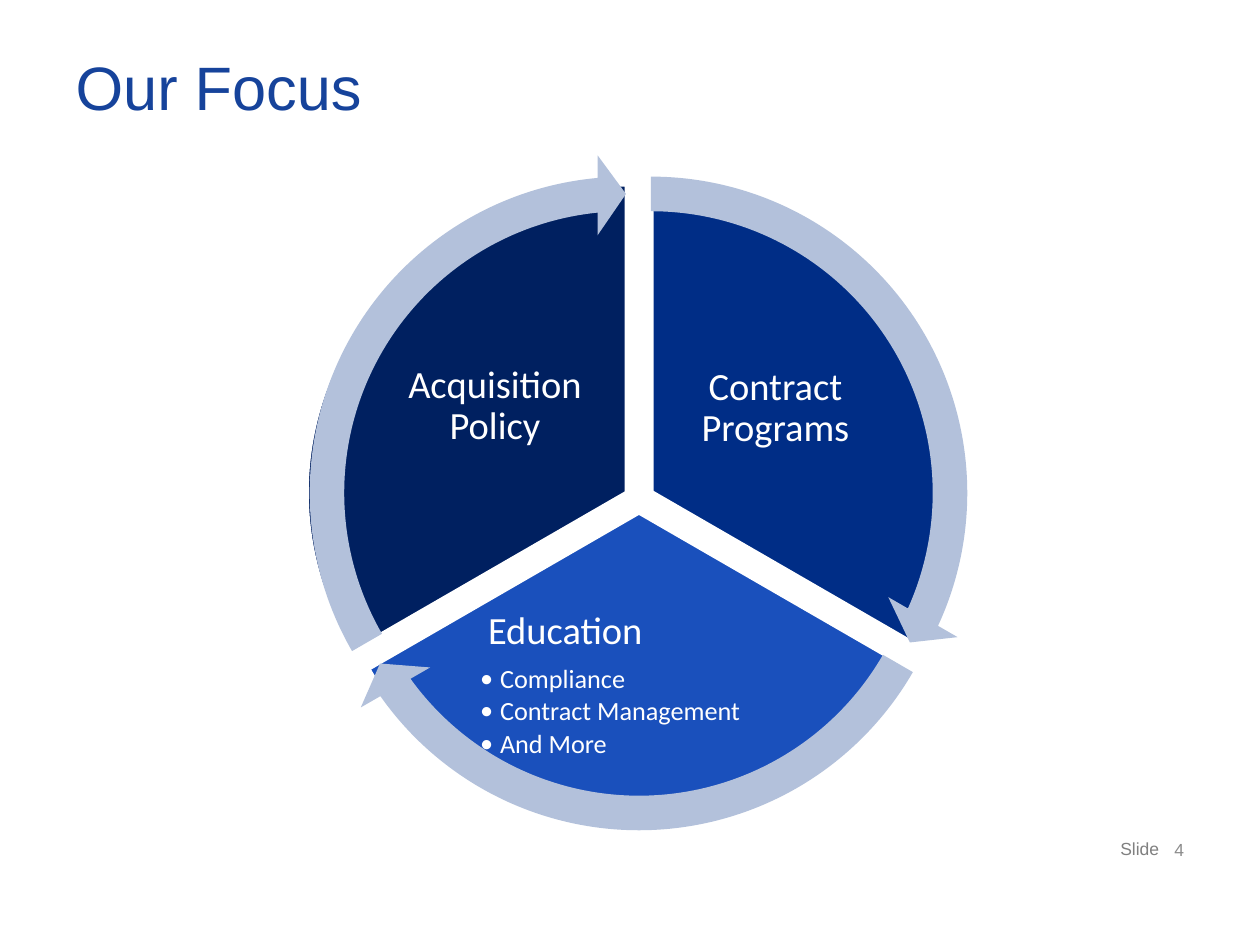
from lxml import etree
from pptx import Presentation, util as u
from pptx.dml.color import RGBColor
from pptx.enum import shapes, text
from pptx.oxml.ns import qn

EMU_PER_PX = 914400 / 126
WHITE, ARROW = "FFFFFF", "B3C1DB"
SHAPE, ALIGN, ANCHOR = shapes.MSO_SHAPE, text.PP_ALIGN, text.MSO_ANCHOR


def px(length):
    """Turn px into EMU."""
    return u.Emu(round(length * EMU_PER_PX))


def rgb(code):
    """Turn a hex string into a colour."""
    return RGBColor.from_string(code)


def add_run(paragraph, words, size, color, face):
    """Add one formatted run."""
    run = paragraph.add_run()
    run.text = words
    run.font.size, run.font.name = u.Pt(size), face
    run.font.color.rgb = rgb(color)


def add_frame(slide, box, inset=None, anchor=ANCHOR.TOP, wrap=True):
    """Add a text box and return its text frame."""
    frame = slide.shapes.add_textbox(*map(px, box)).text_frame
    frame.word_wrap, frame.vertical_anchor = wrap, anchor
    if inset is not None:
        frame.margin_left = frame.margin_right = px(inset)
        frame.margin_top = frame.margin_bottom = px(inset)
    return frame


def add_form(slide, kind, box, adjustments, fill, outline=None):
    """Add a filled preset shape with its adjustments."""
    form = slide.shapes.add_shape(kind, *map(px, box))
    form.shadow.inherit = False
    for index, value in enumerate(adjustments):
        form.adjustments[index] = value
    form.fill.solid()
    form.fill.fore_color.rgb = rgb(fill)
    if outline:
        form.line.color.rgb = rgb(outline)
        form.line.width = u.Pt(2)
    else:
        form.line.fill.background()


def add_title(slide, box, words):
    """Place and format the title."""
    title = slide.shapes.title
    title.left, title.top, title.width, title.height = map(px, box)
    frame = title.text_frame
    frame.auto_size = text.MSO_AUTO_SIZE.NONE
    frame.vertical_anchor = ANCHOR.MIDDLE
    paragraph = frame.paragraphs[0]
    paragraph.alignment, paragraph.line_spacing = ALIGN.LEFT, 0.8
    add_run(paragraph, words, 35, "16439B", "Arial")


def add_sector_name(slide, box, words):
    """Centre a sector's name in its box."""
    paragraph = add_frame(slide, box, 4, ANCHOR.MIDDLE).paragraphs[0]
    paragraph.alignment, paragraph.line_spacing = ALIGN.CENTER, 0.9
    add_run(paragraph, words, 22, WHITE, "Calibri")


def indent(paragraph, left, first=0):
    """Set the left margin and first-line indent."""
    properties = paragraph._p.get_or_add_pPr()
    properties.set("marL", str(px(left)))
    properties.set("indent", str(px(first)))
    return properties


def add_education(slide, box, heading, topics):
    """Write the education heading and its bulleted topics."""
    frame = add_frame(slide, box, 4)
    lead = frame.paragraphs[0]
    indent(lead, 8)
    lead.line_spacing, lead.space_after = 0.9, u.Pt(7.7)
    add_run(lead, heading, 22, WHITE, "Calibri")
    for topic in topics:
        item = frame.add_paragraph()
        properties = indent(item, 20, -20)
        etree.SubElement(properties, qn("a:buFont")).set("typeface", "Calibri")
        etree.SubElement(properties, qn("a:buChar")).set("char", "•")
        item.line_spacing, item.space_after = 0.9, u.Pt(2.25)
        add_run(item, topic, 15, WHITE, "Calibri")


def add_cycle(slide, box):
    """Build the three sectors, their wording and the arrows around them."""
    left, top = box

    def place(x, y, width, height):
        """Move a box into the cycle's area."""
        return left + x, top + y, width, height

    add_form(slide, SHAPE.PIE, place(63, 36, 604, 604), (162, 18), "002D86", WHITE)
    add_sector_name(slide, place(381, 165, 215, 179), "Contract Programs")
    add_form(slide, SHAPE.PIE, place(41, 44, 622, 630), (18, 90), "1A50BC", WHITE)
    add_education(slide, place(189, 453, 334, 165), "Education",
                  ("Compliance", "Contract Management", "And More"))
    add_form(slide, SHAPE.PIE, place(20, 31, 639, 615), (90, 162), "002060", WHITE)
    add_sector_name(slide, place(94, 161, 228, 183), "Acquisition Policy")

    arrows = ((25, 0, 14.73, 161.99), (13, 21, 86.72, 18), (0, 0, 158.73, 90))
    for x, y, end, start in arrows:
        add_form(slide, SHAPE.CIRCULAR_ARROW, place(x, y, 678, 678),
                 (0.051, 3.275, end, start, 0.059), ARROW)


def add_footer(slide, box, label, number):
    """Write the slide label and number."""
    left, top, height = box
    caption = add_frame(slide, (left, top, 64, height), wrap=False)
    add_run(caption.paragraphs[0], label, 10, "808080", "Arial")
    page = add_frame(slide, (left + 54, top, 71, height), anchor=ANCHOR.MIDDLE)
    add_run(page.paragraphs[0], number, 10, "8C8C8C", "Arial")


def main():
    """Build and save the slide."""
    deck = Presentation()
    deck.slide_width, deck.slide_height = px(1260), px(945)
    slide = deck.slides.add_slide(deck.slide_layouts[5])
    add_title(slide, (63, 38, 1134, 110), "Our Focus")
    add_cycle(slide, (287, 154))
    add_footer(slide, (1108, 832, 34), "Slide", "4")
    deck.save("out.pptx")


if __name__ == "__main__":
    main()
